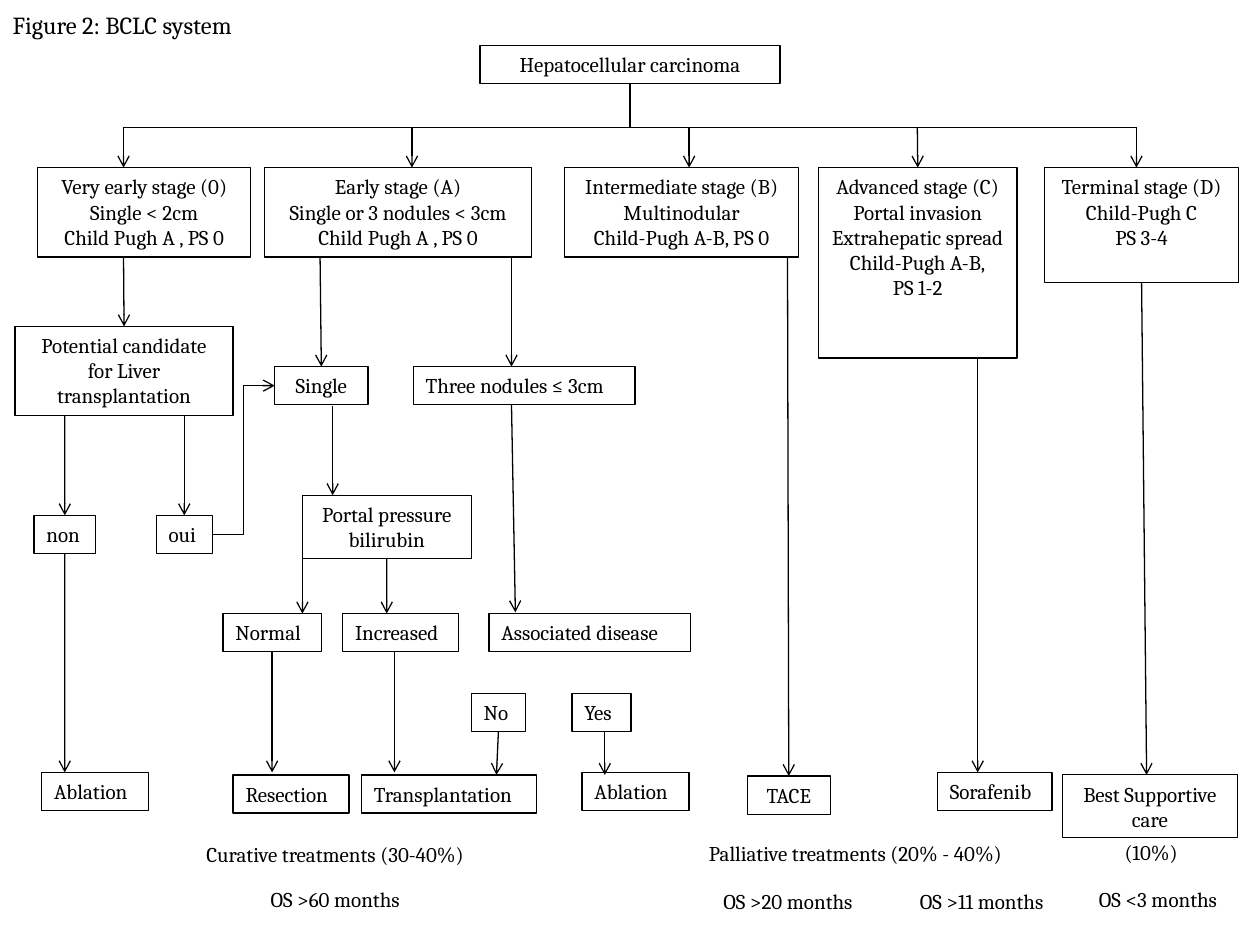
from dataclasses import dataclass
from typing import NamedTuple, Optional

from lxml import etree
from pptx import Presentation
from pptx.dml.color import RGBColor
from pptx.enum import shapes, text
from pptx.oxml import ns
from pptx.util import Pt

TOP, LEFT, BOTTOM, RIGHT = range(4)
CENTER, START = text.PP_ALIGN.CENTER, text.PP_ALIGN.LEFT


@dataclass(frozen=True)
class Theme:
    font: str = "Cambria"
    ink: RGBColor = RGBColor(0, 0, 0)
    body_size: float = 12
    title_size: float = 14
    line_width: float = 0.75


class Box(NamedTuple):
    key: str
    wording: str
    left: float
    top: float
    width: float
    height: float = 21.8
    align: text.PP_ALIGN = START


class Caption(NamedTuple):
    wording: str
    left: float
    top: float
    width: float


class Joint(NamedTuple):
    key: str
    side: int


@dataclass(frozen=True)
class Link:
    start: tuple
    end: tuple
    begin_joint: Optional[Joint] = None
    end_joint: Optional[Joint] = None
    arrow: bool = True
    kind: shapes.MSO_CONNECTOR = shapes.MSO_CONNECTOR.STRAIGHT


THEME = Theme()
STAGE_TOP, STAGE_HEIGHT = 95.8, 51.1
BUS_TOP = 72.7
STEM_X = 360
DROPS = {"very_early": 70.6, "early": 235.4, "intermediate": 393.8,
         "advanced": 524.2, "terminal": 649.4}

BOXES = [
    Box("cancer", "Hepatocellular carcinoma", 274.3, 25.9, 171.4, 21.8, CENTER),
    Box("very_early", "Very early stage (0)\nSingle < 2cm\nChild Pugh A , PS 0",
        21.6, STAGE_TOP, 121.7, STAGE_HEIGHT, CENTER),
    Box("early", "Early stage (A)\nSingle or 3 nodules < 3cm\nChild Pugh A , PS 0",
        151.2, STAGE_TOP, 152.6, STAGE_HEIGHT, CENTER),
    Box("intermediate", "Intermediate stage (B)\nMultinodular\nChild-Pugh A-B, PS 0",
        322.6, STAGE_TOP, 133.9, STAGE_HEIGHT, CENTER),
    Box("advanced", "Advanced stage (C)\nPortal invasion\nExtrahepatic spread\n"
        "Child-Pugh A-B,\nPS 1-2", 467.7, STAGE_TOP, 113.5, 108.7, CENTER),
    Box("terminal", "Terminal stage (D)\nChild-Pugh C\nPS 3-4",
        596.9, STAGE_TOP, 110.9, 65.5, CENTER),
    Box("candidate", "Potential candidate\nfor Liver transplantation",
        8.6, 186.5, 124.6, STAGE_HEIGHT, CENTER),
    Box("non", "non", 19.4, 294.5, 35.3),
    Box("oui", "oui", 89.3, 294.5, 32),
    Box("ablation", "Ablation", 23.8, 441.4, 61.2),
    Box("single", "Single", 157, 209.5, 53.3, 21.8, CENTER),
    Box("three", "Three nodules ≤ 3cm", 236.2, 209.5, 126.7),
    Box("portal", "Portal pressure bilirubin", 172.8, 283, 96.5, 36, CENTER),
    Box("normal", "Normal", 127.4, 350.6, 56.2),
    Box("increased", "Increased", 195.8, 350.6, 66.2),
    Box("disease", "Associated disease", 279.4, 350.6, 115.2),
    Box("resection", "Resection", 133.2, 442.8, 66.2),
    Box("transplantation", "Transplantation", 206.6, 442.8, 100.1),
    Box("disease_ablation", "Ablation", 332.6, 441.4, 61.2),
    Box("no", "No", 269.3, 396.3, 31),
    Box("yes", "Yes", 326.9, 396.3, 33.8),
    Box("tace", "TACE", 427, 443.5, 47.5, 21.8, CENTER),
    Box("sorafenib", "Sorafenib", 535.7, 441.4, 65.5),
    Box("supportive", "Best Supportive\ncare", 607, 442.8, 100.1, 36, CENTER),
]

CAPTIONS = [
    Caption("Curative treatments (30-40%)", 23.8, 477.4, 335.5),
    Caption("Palliative treatments (20% - 40%)", 380.9, 476.6, 216),
    Caption("(10%)", 607, 475.9, 101.5),
    Caption("OS >60 months", 23.8, 503.3, 335.5),
    Caption("OS >20 months", 393.8, 504, 113),
    Caption("OS >11 months", 507.6, 504, 106.6),
    Caption("OS <3 months", 614.2, 503.3, 95),
]

LINKS = [
    Link((STEM_X, 47.7), (STEM_X, BUS_TOP), Joint("cancer", BOTTOM), arrow=False),
    Link((DROPS["very_early"], BUS_TOP), (DROPS["terminal"], BUS_TOP), arrow=False),
    *(Link((x, BUS_TOP), (x, STAGE_TOP),
           end_joint=Joint(key, TOP) if key == "advanced" else None)
      for key, x in DROPS.items()),
    Link((70.6, 146.9), (70.9, 186.5), end_joint=Joint("candidate", TOP)),
    Link((37, 237.6), (37, 294.5), end_joint=Joint("non", TOP)),
    Link((105.3, 237.6), (105.3, 294.5), end_joint=Joint("oui", TOP)),
    Link((37, 316.3), (37, 441.4), Joint("non", BOTTOM)),
    Link((121.3, 305.4), (157, 220.4), Joint("oui", RIGHT), Joint("single", LEFT),
         kind=shapes.MSO_CONNECTOR.ELBOW),
    Link((182.9, 146.9), (183.6, 209.5), end_joint=Joint("single", TOP)),
    Link((292.3, 146.9), (292.3, 209.5)),
    Link((190.1, 231.8), (190.1, 283)),
    Link((292.3, 231.3), (294.5, 349.9)),
    Link((172.8, 316.1), (172.8, 350.6)),
    Link((221, 319), (221, 350.6), Joint("portal", BOTTOM)),
    Link((155.5, 372.4), (155.5, 441.4), Joint("normal", BOTTOM)),
    Link((225.4, 372.4), (225.4, 441.4)),
    Link((284.8, 418.1), (283.7, 442.8), Joint("no", BOTTOM)),
    Link((345.6, 418.1), (345.6, 442.8)),
    Link((450, 146.9), (450.7, 443.5), end_joint=Joint("tace", TOP)),
    Link((558.7, 204.5), (558.7, 441.4)),
    Link((652.3, 161.3), (655.2, 442.8), Joint("terminal", BOTTOM)),
]


def write(shape, wording: str, size: float, align: text.PP_ALIGN) -> None:
    frame = shape.text_frame
    frame.text = wording
    settings = {
        "word_wrap": True, "auto_size": text.MSO_AUTO_SIZE.NONE,
        "vertical_anchor": text.MSO_ANCHOR.TOP,
        "margin_left": Pt(7.2), "margin_right": Pt(7.2),
        "margin_top": Pt(3.6), "margin_bottom": Pt(3.6),
    }
    for name, value in settings.items():
        setattr(frame, name, value)
    for paragraph in frame.paragraphs:
        paragraph.alignment = align
        for name, value in {"name": THEME.font, "size": Pt(size)}.items():
            setattr(paragraph.font, name, value)
        for run in paragraph.runs:
            run.font.color.rgb = THEME.ink


def outline(shape) -> None:
    shape.line.color.rgb = THEME.ink
    shape.line.width = Pt(THEME.line_width)


def draw_title(slide, wording: str) -> None:
    title = slide.shapes.title
    place = {"left": 0, "top": 2.2, "width": 269.3, "height": 24.5}
    for name, value in place.items():
        setattr(title, name, Pt(value))
    write(title, wording, THEME.title_size, START)


def draw_box(slide, box: Box):
    shape = slide.shapes.add_shape(
        shapes.MSO_SHAPE.RECTANGLE,
        Pt(box.left), Pt(box.top), Pt(box.width), Pt(box.height))
    shape.shadow.inherit = False
    shape.fill.background()
    outline(shape)
    write(shape, box.wording, THEME.body_size, box.align)
    return shape


def draw_caption(slide, caption: Caption) -> None:
    shape = slide.shapes.add_textbox(
        Pt(caption.left), Pt(caption.top), Pt(caption.width), Pt(21.8))
    write(shape, caption.wording, THEME.body_size, CENTER)


def draw_link(slide, link: Link, boxes: dict) -> None:
    ends = [Pt(value) for value in (*link.start, *link.end)]
    connector = slide.shapes.add_connector(link.kind, *ends)
    if link.begin_joint:
        connector.begin_connect(boxes[link.begin_joint.key], link.begin_joint.side)
    if link.end_joint:
        connector.end_connect(boxes[link.end_joint.key], link.end_joint.side)
    outline(connector)
    properties = connector._element.spPr
    if link.arrow:
        line = properties.find(ns.qn("a:ln"))
        etree.SubElement(line, ns.qn("a:tailEnd"), type="arrow")
    etree.SubElement(properties, ns.qn("a:effectLst"))


def main() -> None:
    presentation = Presentation()
    presentation.slide_width, presentation.slide_height = Pt(720), Pt(540)
    slide = presentation.slides.add_slide(presentation.slide_layouts[5])
    draw_title(slide, "Figure 2: BCLC system")
    boxes = {box.key: draw_box(slide, box) for box in BOXES}
    for link in LINKS:
        draw_link(slide, link, boxes)
    for caption in CAPTIONS:
        draw_caption(slide, caption)
    presentation.save("out.pptx")


if __name__ == "__main__":
    main()
